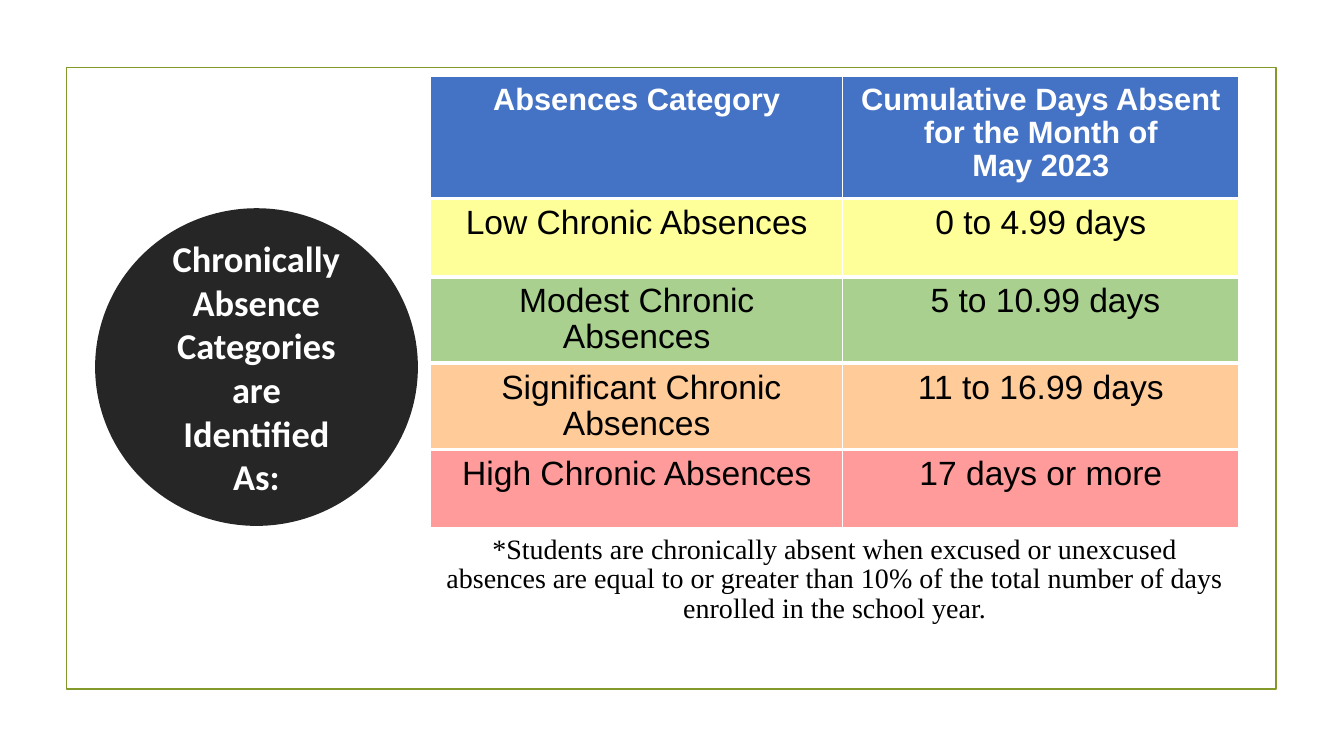
from lxml.etree import SubElement
from pptx import Presentation
from pptx.dml.color import RGBColor
from pptx.enum.shapes import MSO_SHAPE as Preset
from pptx.enum.text import MSO_ANCHOR as Anchor, PP_ALIGN as Align
from pptx.oxml.ns import qn
from pptx.util import Cm, Pt

WHITE, BLACK, DARK = "FFFFFF", "000000", "262626"
COLUMN_WIDTHS = (10.39, 9.98)
ROW_HEIGHTS = (3.07, 1.98, 1.98, 1.98, 1.98, 2.82)
HEADER = ("Absences Category", "Cumulative Days Absent for the Month of\nMay 2023")
CATEGORIES = (
    ("Low Chronic Absences", "0 to 4.99 days", "FFFF99"),
    ("Modest Chronic Absences", " 5 to 10.99 days", "A9D08E"),
    (" Significant Chronic Absences", "11 to 16.99 days", "FFCC99"),
    ("High Chronic Absences", "17 days or more", "FF9B9B"),
)
FOOTNOTE = (
    "*Students are chronically absent when excused or unexcused absences are equal to "
    "or greater than 10% of the total number of days enrolled in the school year."
)


def rgb(value):
    """Turn a hex string into a colour."""
    return RGBColor.from_string(value)


def write(frame, text, size, name, color, bold=False, spacing=1.0):
    """Fill a text frame with centred paragraphs in one font."""
    frame.word_wrap = True
    frame.text = text
    for paragraph in frame.paragraphs:
        paragraph.alignment = Align.CENTER
        paragraph.line_spacing = spacing
        font = paragraph.font
        font.size, font.name, font.bold = Pt(size), name, bold
        font.color.rgb = rgb(color)


def add_outlined(slide, preset, box, line, width, fill=None):
    """Add a preset shape with an outline and an optional fill."""
    shape = slide.shapes.add_shape(preset, *map(Cm, box))
    shape.shadow.inherit = False
    shape.line.color.rgb = rgb(line)
    shape.line.width = Pt(width)
    if fill:
        shape.fill.solid()
        shape.fill.fore_color.rgb = rgb(fill)
    else:
        shape.fill.background()
    return shape


def add_borders(cell, top, bottom):
    """Draw white cell borders, with the sides one point wide."""
    properties = cell._tc.get_or_add_tcPr()
    for side, width in (("L", 1), ("R", 1), ("T", top), ("B", bottom)):
        line = SubElement(properties, qn(f"a:ln{side}"), w=str(Pt(width)))
        SubElement(SubElement(line, qn("a:solidFill")), qn("a:srgbClr"), val=WHITE)


def style_cell(cell, fill, top, bottom):
    """Set the margins, borders and fill of a cell."""
    cell.margin_left = cell.margin_right = Cm(0.33)
    cell.margin_top = cell.margin_bottom = Cm(0.18)
    add_borders(cell, top, bottom)
    if fill:
        cell.fill.solid()
        cell.fill.fore_color.rgb = rgb(fill)
    else:
        cell.fill.background()


def add_category_table(slide):
    """Add the table of absence categories with its footnote row."""
    box = (10.85, 1.93, sum(COLUMN_WIDTHS), sum(ROW_HEIGHTS))
    table = slide.shapes.add_table(len(ROW_HEIGHTS), 2, *map(Cm, box)).table
    for column, width in zip(table.columns, COLUMN_WIDTHS):
        column.width = Cm(width)
    for row, height in zip(table.rows, ROW_HEIGHTS):
        row.height = Cm(height)

    last = len(CATEGORIES)
    for index, (*texts, fill) in enumerate(((*HEADER, "4472C4"), *CATEGORIES)):
        header = index == 0
        size, color = (22, WHITE) if header else (24, BLACK)
        for cell, text in zip(table.rows[index].cells, texts):
            style_cell(cell, fill, 1 if header else 3, 1 if index == last else 3)
            write(cell.text_frame, text, size, "Arial", color, header, 0.96)

    note = table.cell(last + 1, 0)
    note.merge(table.cell(last + 1, 1))
    for cell in table.rows[last + 1].cells:
        style_cell(cell, None, 1, 1)
    write(note.text_frame, FOOTNOTE, 20, "Times New Roman", BLACK, spacing=0.96)


def add_title_circle(slide):
    """Add the dark circle that holds the title."""
    circle = add_outlined(slide, Preset.OVAL, (2.64, 5.49, 7.65, 7.52), DARK, 13.75, DARK)
    circle.text_frame.vertical_anchor = Anchor.MIDDLE
    title = "Chronically Absence Categories are Identified As:"
    write(circle.text_frame, title, 26, "Calibri", WHITE, bold=True)


def main():
    """Build and save the slide."""
    presentation = Presentation()
    presentation.slide_width, presentation.slide_height = Cm(33.87), Cm(19.05)
    slide = presentation.slides.add_slide(presentation.slide_layouts[6])
    add_outlined(slide, Preset.RECTANGLE, (1.68, 1.7, 30.48, 15.67), "83992A", 1.25)
    add_category_table(slide)
    add_title_circle(slide)
    presentation.save("out.pptx")


if __name__ == "__main__":
    main()
